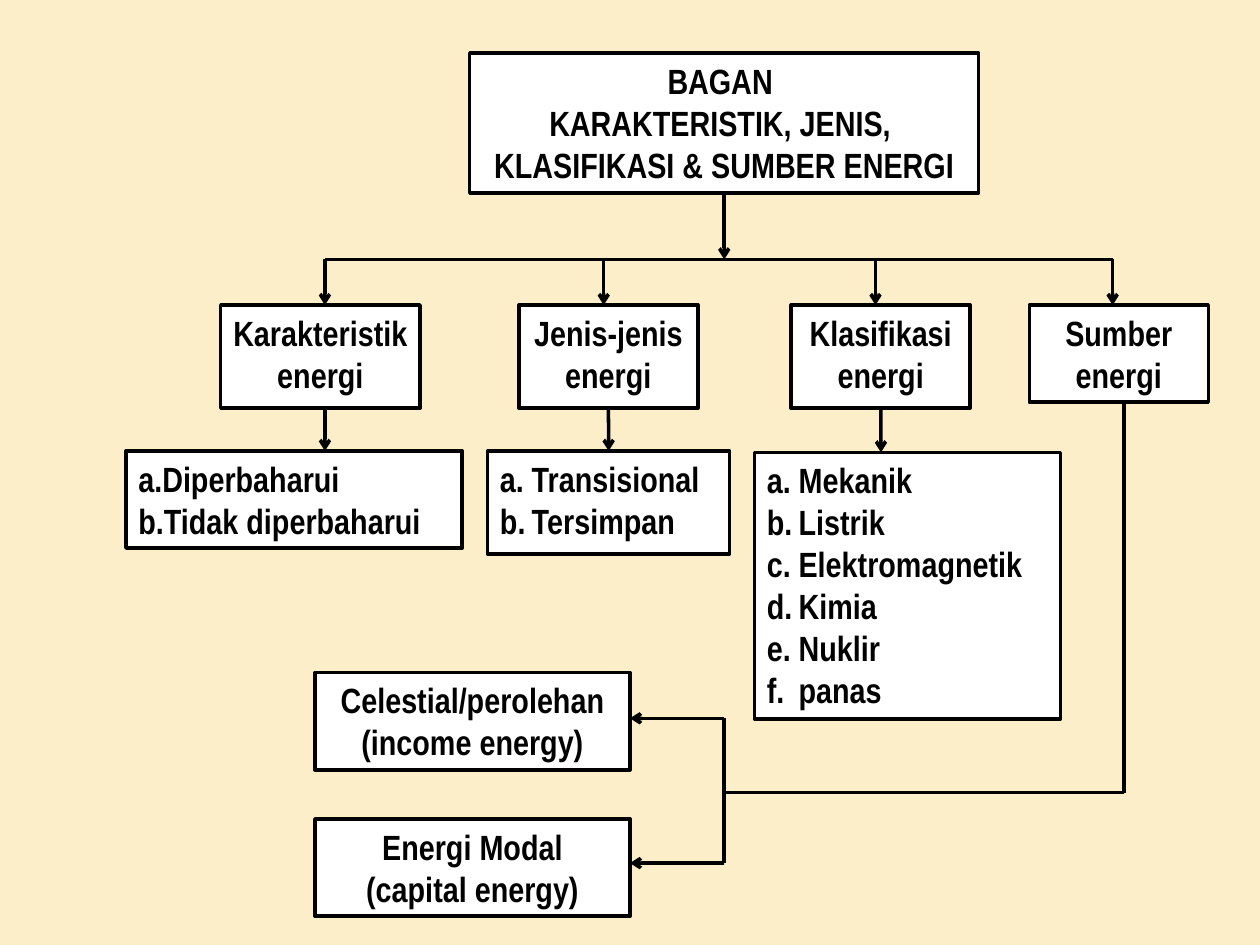
from lxml import etree
from pptx import Presentation
from pptx.dml.color import RGBColor
from pptx.enum.shapes import MSO_CONNECTOR, MSO_SHAPE
from pptx.enum.text import MSO_ANCHOR, PP_ALIGN
from pptx.oxml.ns import qn
from pptx.util import Cm, Pt

RECT = MSO_SHAPE.RECTANGLE
LINE = MSO_CONNECTOR.STRAIGHT
TOP = MSO_ANCHOR.TOP
LEFT, MID = PP_ALIGN.LEFT, PP_ALIGN.CENTER
FONT = "Arial Narrow"
COLORS = {"back": "FBEEC9", "box": "FFFFFF", "ink": "000000"}

TITLE = ["BAGAN ", "KARAKTERISTIK, JENIS, ", "KLASIFIKASI & SUMBER ENERGI"]
HEADS = [
    (4.45, 4.02, 2.08, ["Karakteristik energi"]),
    (10.46, 3.61, 2.08, ["Jenis-jenis energi"]),
    (15.95, 3.61, 2.08, ["Klasifikasi energi"]),
    (20.75, 3.61, 1.96, ["Sumber", "energi"]),
]
LISTS = [
    (2.54, 9.09, 6.78, 1.96, 0.48, ["Diperbaharui", "Tidak diperbaharui"]),
    (9.83, 9.09, 4.88, 2.08, 0.64, ["Transisional", "Tersimpan"]),
    (15.21, 9.12, 6.17, 5.38, 0.64,
     ["Mekanik", "Listrik", "Elektromagnetik", "Kimia", "Nuklir", "panas"]),
]
SOURCES = [
    (13.56, 14.48, ["Celestial/perolehan (income energy)"]),
    (16.51, 17.4, ["Energi Modal", "(capital energy)"]),
]
DROPS = [6.55, 12.17, 17.65, 22.43]
STEM, BUS, HEAD_Y = 14.6, 5.23, 6.15
SIDE, FORK = 22.66, 15.98
SRC_X, SRC_W = 6.35, 6.35


def rgb(name):
    return RGBColor.from_string(COLORS[name])


def box(x, y, w, h, lines, hang=0):
    shape = slide.shapes.add_shape(RECT, Cm(x), Cm(y), Cm(w), Cm(h))
    shape.shadow.inherit = False
    shape.fill.solid()
    shape.fill.fore_color.rgb = rgb("box")
    shape.line.color.rgb = rgb("ink")
    shape.line.width = Pt(2)
    frame = shape.text_frame
    frame.word_wrap = True
    frame.vertical_anchor = TOP
    for i, text in enumerate(lines):
        para = frame.add_paragraph() if i else frame.paragraphs[0]
        para.text = text
        para.alignment = LEFT if hang else MID
        para.font.name = FONT
        para.font.size = Pt(20)
        para.font.bold = True
        para.font.color.rgb = rgb("ink")
        if hang:
            props = para._p.get_or_add_pPr()
            props.set("marL", str(Cm(hang)))
            props.set("indent", str(-Cm(hang)))
            mark = etree.Element(qn("a:buAutoNum"), type="alphaLcPeriod")
            props.insert(0, mark)
    return shape


def link(x1, y1, x2, y2, arrow=True):
    line = slide.shapes.add_connector(LINE, Cm(x1), Cm(y1), Cm(x2), Cm(y2))
    line.line.color.rgb = rgb("ink")
    line.line.width = Pt(2)
    if arrow:
        etree.SubElement(line.line._get_or_add_ln(), qn("a:tailEnd"), type="arrow")
    etree.SubElement(line._element.spPr, qn("a:effectLst"))
    return line


deck = Presentation()
deck.slide_width, deck.slide_height = Cm(25.4), Cm(19.05)
slide = deck.slides.add_slide(deck.slide_layouts[6])
slide.background.fill.solid()
slide.background.fill.fore_color.rgb = rgb("back")

title = box(9.47, 1.07, 10.26, 2.82, TITLE)
heads = [box(x, HEAD_Y, w, h, lines) for x, w, h, lines in HEADS]
lists = [box(x, y, w, h, lines, hang) for x, y, w, h, hang, lines in LISTS]

link(STEM, 3.89, STEM, BUS).begin_connect(title, 2)
link(DROPS[0], BUS, DROPS[-1], BUS, False)
for x in DROPS:
    link(x, BUS, x, HEAD_Y)

link(DROPS[0], 8.23, DROPS[0], 9.09)
pair = link(12.27, 8.23, 12.27, 9.09)
pair.begin_connect(heads[1], 2)
pair.end_connect(lists[1], 0)
link(17.76, 8.23, 17.76, 9.12).begin_connect(heads[2], 2)

link(SIDE, 8.11, SIDE, FORK, False)
link(SIDE, FORK, STEM, FORK, False)
link(STEM, SOURCES[0][1], STEM, SOURCES[1][1], False)
for y, tip, lines in SOURCES:
    box(SRC_X, y, SRC_W, 1.96, lines)
    link(STEM, tip, SRC_X + SRC_W, tip)

deck.save("out.pptx")
